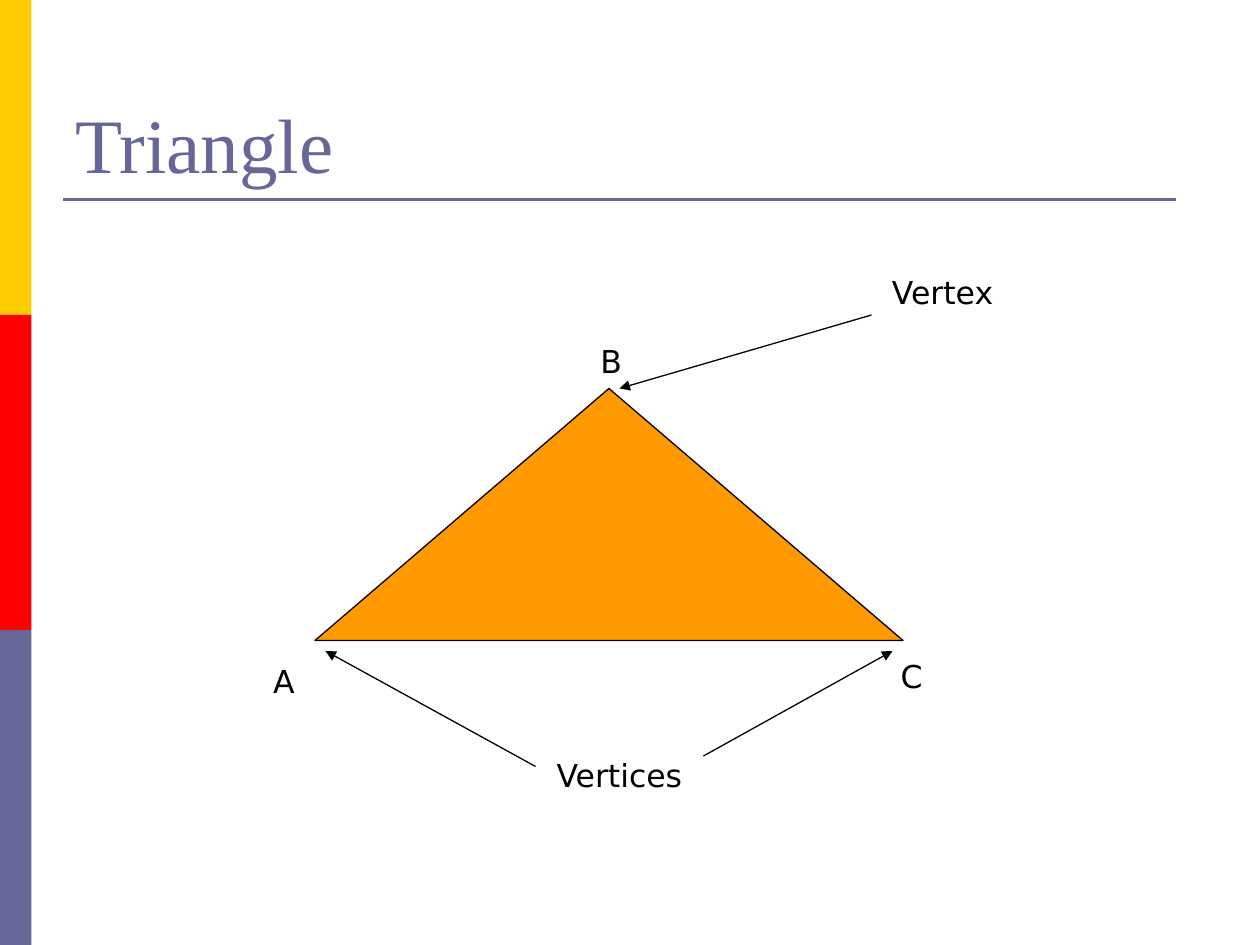
from pptx import Presentation
from pptx.dml.color import RGBColor
from pptx.enum.shapes import MSO_CONNECTOR, MSO_SHAPE
from pptx.enum.text import MSO_ANCHOR, MSO_AUTO_SIZE
from pptx.oxml.ns import qn
from pptx.util import Pt
from lxml import etree

RECT = MSO_SHAPE.RECTANGLE
PEAK = MSO_SHAPE.ISOSCELES_TRIANGLE
LINE = MSO_CONNECTOR.STRAIGHT
TOP, BOTTOM = MSO_ANCHOR.TOP, MSO_ANCHOR.BOTTOM
GROW, FIXED = MSO_AUTO_SIZE.SHAPE_TO_FIT_TEXT, MSO_AUTO_SIZE.NONE
SANS, SERIF = "DejaVu Sans", "Times New Roman"
BLACK, SLATE = "000000", "666699"


def paint(color, tone):
    color.rgb = RGBColor.from_string(tone)


def add_form(slide, kind, box, fill, edge=None):
    form = slide.shapes.add_shape(kind, *map(Pt, box))
    form.shadow.inherit = False
    form.fill.solid()
    paint(form.fill.fore_color, fill)
    if edge:
        paint(form.line.color, edge)
        form.line.width = Pt(0.75)
    else:
        form.line.fill.background()


def add_line(slide, start, end, tone=BLACK, width=0.75, arrow=True):
    line = slide.shapes.add_connector(LINE, *map(Pt, start + end))
    paint(line.line.color, tone)
    line.line.width = Pt(width)
    props = line._element.spPr
    etree.SubElement(props, qn("a:effectLst"))
    if arrow:
        tip = etree.SubElement(props.find(qn("a:ln")), qn("a:tailEnd"))
        tip.set("type", "triangle")


def add_text(slide, text, box, size=18, face=SANS, tone=BLACK,
             anchor=TOP, wrap=False):
    shape = slide.shapes.add_textbox(*map(Pt, box))
    frame = shape.text_frame
    frame.word_wrap = wrap
    frame.auto_size = FIXED if wrap else GROW
    frame.vertical_anchor = anchor
    para = frame.paragraphs[0]
    para.text = text
    para.font.size = Pt(size)
    para.font.name = face
    paint(para.font.color, tone)


def main():
    deck = Presentation()
    deck.slide_width, deck.slide_height = Pt(720), Pt(540)
    slide = deck.slides.add_slide(deck.slide_layouts[6])

    for row, tone in enumerate(("FFCC00", "FF0000", SLATE)):
        add_form(slide, RECT, (0, row * 180, 18, 180), tone)
    add_line(slide, (36, 114), (672, 114), SLATE, 1.5, False)
    add_text(slide, "Triangle", (36, 21.6, 648, 90), 44, SERIF, SLATE,
             BOTTOM, True)

    add_form(slide, PEAK, (180, 222, 336, 144), "FF9900", BLACK)

    labels = (
        ("A", 149, 374.6, 26.6),
        ("B", 336, 192, 26.6),
        ("C", 507.6, 372, 27.4),
        ("Vertex", 502.6, 152.6, 73.4),
        ("Vertices", 311, 428.4, 86.4),
    )
    for text, left, top, width in labels:
        add_text(slide, text, (left, top, width, 28.8))

    arrows = (
        ((498, 180), (354, 222)),
        ((306, 438), (186, 372)),
        ((402, 432), (510, 372)),
    )
    for start, end in arrows:
        add_line(slide, start, end)

    deck.save("out.pptx")


if __name__ == "__main__":
    main()
